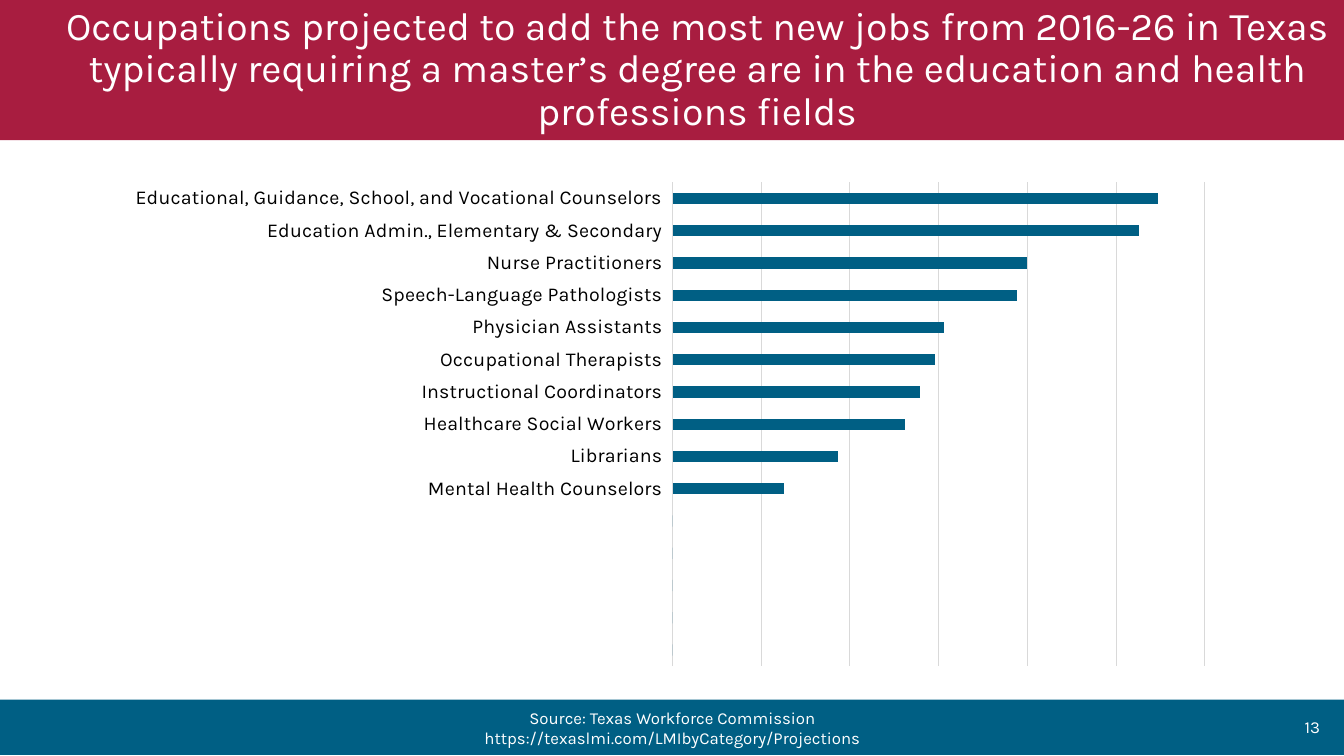
from lxml.etree import SubElement as Sub
from pptx import Presentation
from pptx.chart.data import CategoryChartData as Data
from pptx.dml.color import RGBColor
from pptx.enum.chart import XL_CHART_TYPE as Kind, XL_TICK_LABEL_POSITION as Label, XL_TICK_MARK as Tick
from pptx.enum.shapes import MSO_SHAPE as Shape
from pptx.enum.text import MSO_ANCHOR as Anchor, PP_ALIGN as Align
from pptx.oxml.ns import qn
from pptx.util import Inches, Pt

RED = RGBColor(0xA8, 0x1D, 0x40)
BLUE = RGBColor(0x00, 0x5F, 0x84)
WHITE = RGBColor(0xFF, 0xFF, 0xFF)
BLACK = RGBColor(0, 0, 0)
GRAY = RGBColor(0xD9, 0xD9, 0xD9)

JOBS = [
    ("Educational, Guidance, School, and Vocational Counselors", 100),
    ("Education Admin., Elementary & Secondary", 96),
    ("Nurse Practitioners", 73),
    ("Speech-Language Pathologists", 71),
    ("Physician Assistants", 56),
    ("Occupational Therapists", 54),
    ("Instructional Coordinators", 51),
    ("Healthcare Social Workers", 48),
    ("Librarians", 34),
    ("Mental Health Counselors", 23),
] + [("", 0)] * 5
TOP = 109.65
STEPS = 6


class Page:
    def __init__(self, deck, font):
        self.slide = deck.slides.add_slide(deck.slide_layouts[6])
        self.font = font

    def style(self, font, size, color):
        font.name = self.font
        font.size = Pt(size)
        font.color.rgb = color

    def band(self, box, color):
        shape = self.slide.shapes.add_shape(Shape.RECTANGLE, *map(Inches, box))
        shape.shadow.inherit = False
        shape.fill.solid()
        shape.fill.fore_color.rgb = color
        shape.line.fill.background()
        return shape

    def label(self, shape, text, size, align):
        frame = shape.text_frame
        frame.word_wrap = True
        frame.vertical_anchor = Anchor.MIDDLE
        para = frame.paragraphs[0]
        para.alignment = align
        run = para.add_run()
        run.text = text
        self.style(run.font, size, WHITE)
        return para

    def text(self, box, text, size, align):
        shape = self.slide.shapes.add_textbox(*map(Inches, box))
        self.label(shape, text, size, align)

    def title(self, box, text):
        para = self.label(self.band(box, RED), text, 28, Align.CENTER)
        para.line_spacing = 0.9
        para._p.get_or_add_pPr().set("marL", str(Inches(0.5)))

    def bars(self, box, rows):
        data = Data()
        names, vals = zip(*reversed(rows))
        data.categories = names
        data.add_series("Series 1", vals)
        frame = self.slide.shapes.add_chart(Kind.BAR_CLUSTERED, *map(Inches, box), data)
        chart = frame.chart
        chart.has_legend = chart.has_title = False
        self.style(chart.font, 16, BLACK)
        plot = chart.plots[0]
        plot.gap_width = 182
        plot.vary_by_categories = False
        fill = plot.series[0].format.fill
        fill.solid()
        fill.fore_color.rgb = BLUE
        cat, val = chart.category_axis, chart.value_axis
        cat.major_tick_mark = Tick.NONE
        cat.tick_label_position = Label.LOW
        self.style(cat.tick_labels.font, 14, BLACK)
        val.minimum_scale, val.maximum_scale = 0, TOP
        val.major_unit = TOP / STEPS
        val.has_major_gridlines = True
        for part in (cat, val.major_gridlines):
            part.format.line.color.rgb = GRAY
            part.format.line.width = Pt(0.75)
        val.visible = False
        self.place(chart, 0.5, 0.02, 0.48, 0.96)

    def place(self, chart, x, y, w, h):
        area = chart._chartSpace.chart.plotArea
        for old in area.findall(qn("c:layout")):
            area.remove(old)
        lay = area.makeelement(qn("c:layout"))
        area.insert(0, lay)
        man = Sub(lay, qn("c:manualLayout"))
        pairs = [("layoutTarget", "inner"), ("xMode", "edge"), ("yMode", "edge"),
                 ("x", x), ("y", y), ("w", w), ("h", h)]
        for tag, val in pairs:
            Sub(man, qn("c:" + tag)).set("val", str(val))


def main():
    deck = Presentation()
    deck.slide_width, deck.slide_height = Inches(13.33), Inches(7.5)
    page = Page(deck, "Karla")
    page.band((0, 6.94, 13.33, 0.55), BLUE)
    page.text((3.94, 7.02, 5.46, 0.4),
              "Source: Texas Workforce Commission "
              "https://texaslmi.com/LMIbyCategory/Projections", 12, Align.CENTER)
    page.text((10.19, 7.01, 3, 0.4), "13", 12, Align.RIGHT)
    page.title((0, 0, 13.33, 1.39),
               "Occupations projected to add the most new jobs from 2016-26 in Texas "
               "typically requiring a master’s degree are in the education "
               "and health professions fields")
    page.bars((1.17, 1.71, 11, 5), JOBS)
    deck.save("out.pptx")


if __name__ == "__main__":
    main()
